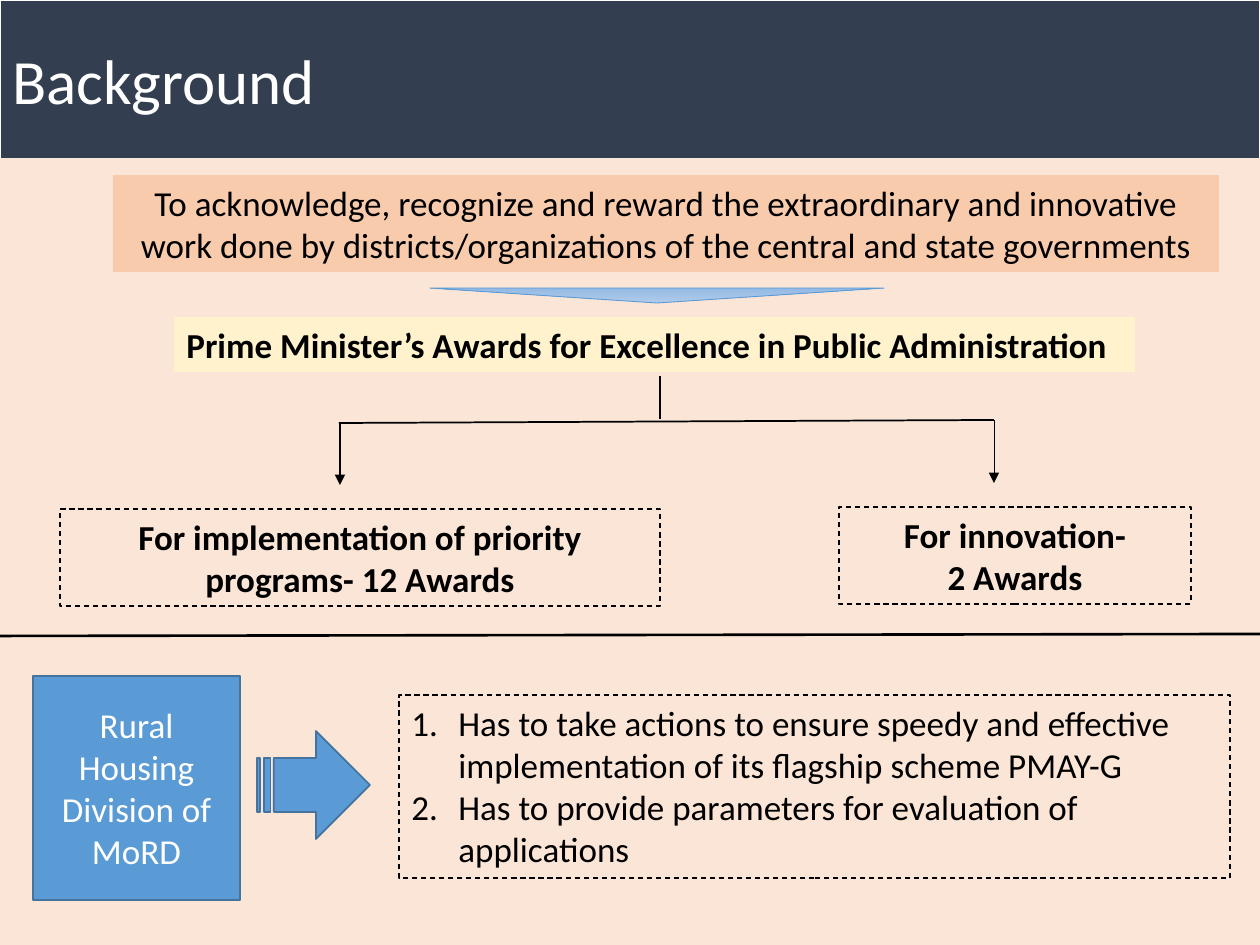
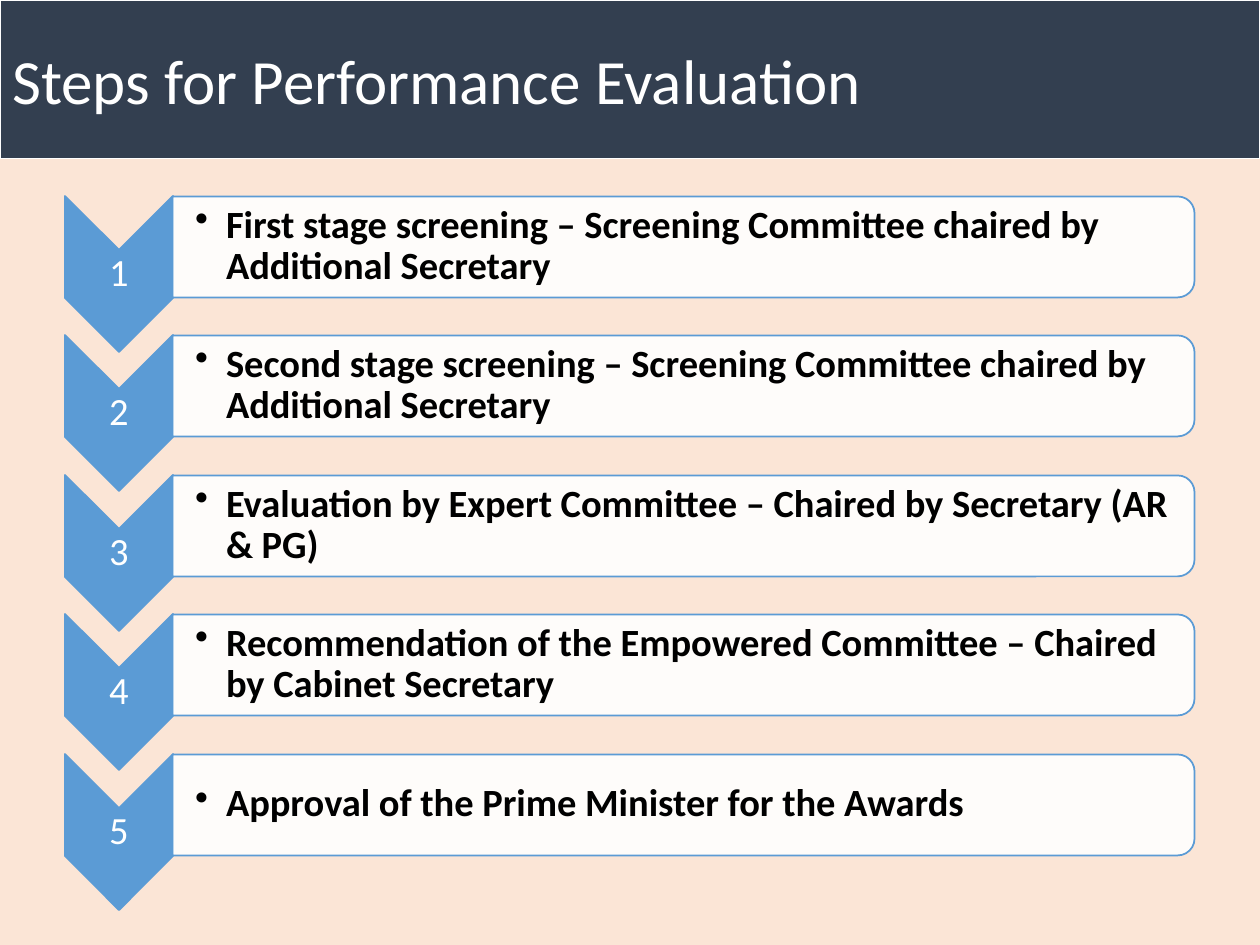
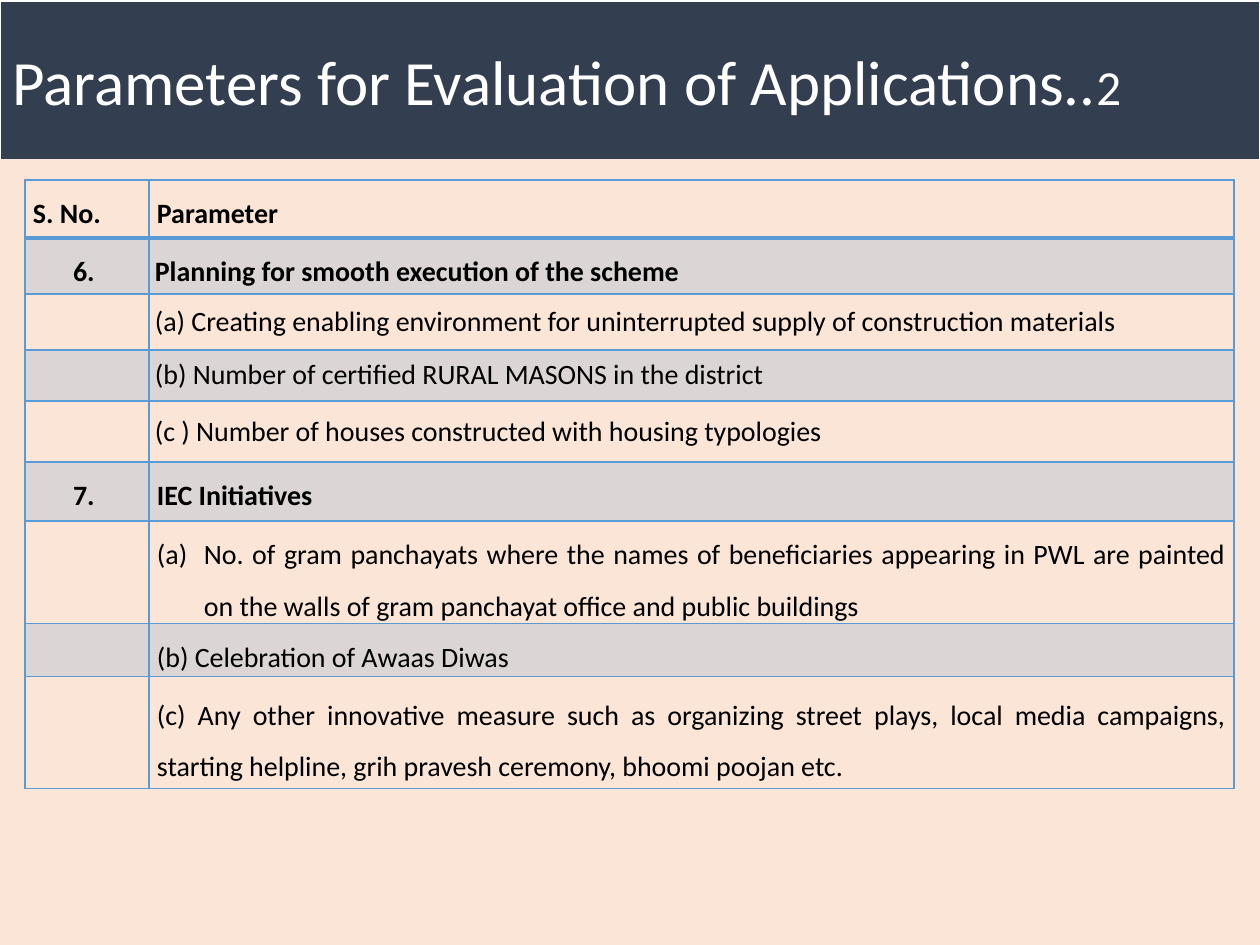
from dataclasses import dataclass, replace
from typing import Optional

from lxml import etree
from pptx import Presentation
from pptx import util as u
from pptx.dml.color import RGBColor
from pptx.enum import dml, shapes, text
from pptx.oxml.ns import qn

EMU_PER_PX = 914400 / 126
SLIDE_W, SLIDE_H = 1260, 945
TITLE_H = 159

WHITE = RGBColor(0xFF, 0xFF, 0xFF)
BLACK = RGBColor(0x00, 0x00, 0x00)
NAVY = RGBColor(0x33, 0x3F, 0x50)
PEACH = RGBColor(0xFB, 0xE5, 0xD6)
ORANGE = RGBColor(0xF8, 0xCB, 0xAD)
CREAM = RGBColor(0xFF, 0xF2, 0xCC)
BLUE = RGBColor(0x5B, 0x9B, 0xD5)
DARK_BLUE = RGBColor(0x43, 0x73, 0x9E)
PALE_BLUE = RGBColor(0xB1, 0xCB, 0xE9)
SOFT_BLUE = RGBColor(0x93, 0xB9, 0xE4)

FONT = "Calibri"
PRESET = shapes.MSO_SHAPE
LEFT, CENTER, JUSTIFY = text.PP_ALIGN.LEFT, text.PP_ALIGN.CENTER, text.PP_ALIGN.JUSTIFY
TOP, MIDDLE = text.MSO_ANCHOR.TOP, text.MSO_ANCHOR.MIDDLE


@dataclass(frozen=True)
class Box:
    x: int
    y: int
    w: int
    h: int

    def emu(self) -> tuple:
        return px(self.x), px(self.y), px(self.w), px(self.h)

    def down(self, dy: int) -> "Box":
        return replace(self, y=self.y + dy)

    def before_quarter_turn(self) -> "Box":
        """The box that covers this one once it is turned by 90 degrees."""
        shift = (self.w - self.h) // 2
        return Box(self.x + shift, self.y - shift, self.h, self.w)


@dataclass(frozen=True)
class Line:
    color: RGBColor
    width: float = 1
    dashed: bool = False


@dataclass(frozen=True)
class Marker:
    tag: str
    attribute: str
    value: str
    indent: int


@dataclass(frozen=True)
class TextStyle:
    size: int = 20
    color: RGBColor = BLACK
    bold: bool = False
    align: text.PP_ALIGN = LEFT
    anchor: text.MSO_ANCHOR = TOP
    spacing: Optional[float] = None
    marker: Optional[Marker] = None


@dataclass(frozen=True)
class Connector:
    start: tuple[int, int]
    end: tuple[int, int]
    width: float = 1
    arrow: bool = False


@dataclass(frozen=True)
class ParameterRow:
    number: str
    parameter: str
    height: int
    style: TextStyle
    shaded: bool = False
    margin: int = 8


NUMBERED = Marker("a:buAutoNum", "type", "arabicPeriod", 47)
LETTERED = Marker("a:buAutoNum", "type", "alphaLcParenBoth", 47)
BULLET = Marker("a:buChar", "char", "•", 31)

TITLE = TextStyle(36, WHITE, anchor=MIDDLE)
BODY = TextStyle()
CENTERED = TextStyle(align=CENTER)
AWARD = TextStyle(bold=True, align=CENTER)
DASHED = Line(BLACK, 0.75, dashed=True)
STEP_NUMBER = TextStyle(22, WHITE, align=CENTER, anchor=MIDDLE, spacing=0.9)
STEP_TEXT = TextStyle(22, bold=True, anchor=MIDDLE, spacing=0.9, marker=BULLET)
HEADING = TextStyle(16, bold=True, align=JUSTIFY, spacing=1.5)
SHORT_ITEM = TextStyle(16, anchor=MIDDLE)
LONG_ITEM = TextStyle(16, align=JUSTIFY, anchor=MIDDLE, spacing=1.5)

BRANCHES = [
    Connector((339, 423), (994, 420)),
    Connector((340, 422), (340, 485), arrow=True),
    Connector((994, 420), (994, 483), 0.5, arrow=True),
    Connector((660, 376), (660, 419)),
    Connector((0, 636), (SLIDE_W, 634), 1.5),
]

STEPS = [
    "First stage screening – Screening Committee chaired by Additional Secretary",
    "Second stage screening – Screening Committee chaired by Additional Secretary",
    "Evaluation by Expert Committee – Chaired by Secretary (AR & PG)",
    "Recommendation of the Empowered Committee – Chaired by Cabinet Secretary",
    "Approval of the Prime Minister for the Awards",
]
STEPS_SPAN = 558

COLUMNS = (124, 1085)
ROWS = [
    ParameterRow("S. No.", "Parameter", 58, HEADING),
    ParameterRow("6. ", "Planning for smooth execution of the scheme", 56, HEADING, True, 6),
    ParameterRow("", "(a) Creating enabling environment for uninterrupted supply of "
                 "construction materials", 56, SHORT_ITEM, margin=6),
    ParameterRow("", "(b) Number of certified RURAL MASONS in the district",
                 51, SHORT_ITEM, True, 6),
    ParameterRow("", "(c ) Number of houses constructed with housing typologies",
                 61, SHORT_ITEM, margin=6),
    ParameterRow("7. ", "IEC Initiatives", 59, HEADING, True),
    ParameterRow("", "No. of gram panchayats where the names of beneficiaries appearing in PWL "
                 "are painted on the walls of gram panchayat office and public buildings",
                 97, replace(LONG_ITEM, marker=LETTERED)),
    ParameterRow("", "(b) Celebration of Awaas Diwas", 53, replace(LONG_ITEM, anchor=TOP), True),
    ParameterRow("", "(c) Any other innovative measure such as organizing street plays, local "
                 "media campaigns, starting helpline, grih pravesh ceremony, bhoomi poojan etc.",
                 112, LONG_ITEM),
]


def px(length: int) -> int:
    return round(length * EMU_PER_PX)


def set_alpha(fill_parent, percent: int) -> None:
    color = fill_parent.find(f"{qn('a:solidFill')}/{qn('a:srgbClr')}")
    etree.SubElement(color, qn("a:alpha"), val=str(percent * 1000))


def set_marker(p, marker: Marker) -> None:
    pPr = p._p.get_or_add_pPr()
    pPr.set("marL", str(px(marker.indent)))
    pPr.set("indent", str(-px(marker.indent)))
    etree.SubElement(pPr, qn(marker.tag)).set(marker.attribute, marker.value)


def write(tf, content: str, style: TextStyle) -> None:
    """Fill a text frame, one paragraph for each line of content."""
    tf.text = content
    tf.word_wrap = True
    tf.vertical_anchor = style.anchor
    for p in tf.paragraphs:
        p.alignment = style.align
        if style.spacing:
            p.line_spacing = style.spacing
        if style.marker:
            set_marker(p, style.marker)
        for r in p.runs:
            format_run(r, style)


def format_run(r, style: TextStyle) -> None:
    r.font.name = FONT
    r.font.size = u.Pt(style.size)
    r.font.bold = style.bold
    r.font.color.rgb = style.color


def add_shape(s, preset: PRESET, box: Box, fill: Optional[RGBColor] = None,
              line: Optional[Line] = None, content: str = "", style: TextStyle = BODY):
    sp = s.shapes.add_shape(preset, *box.emu())
    sp.shadow.inherit = False
    if fill is None:
        sp.fill.background()
    else:
        sp.fill.solid()
        sp.fill.fore_color.rgb = fill
    if line is None:
        sp.line.fill.background()
    else:
        sp.line.color.rgb = line.color
        sp.line.width = u.Pt(line.width)
        if line.dashed:
            sp.line.dash_style = dml.MSO_LINE.DASH
    if content:
        write(sp.text_frame, content, style)
    return sp


def add_label(s, box: Box, content: str, style: TextStyle, left_inset: int = 3) -> None:
    tf = s.shapes.add_textbox(*box.emu()).text_frame
    write(tf, content, style)
    tf.margin_left = px(left_inset)
    tf.margin_top = tf.margin_right = tf.margin_bottom = px(3)


def add_connector(s, spec: Connector) -> None:
    ends = [px(v) for v in spec.start + spec.end]
    c = s.shapes.add_connector(shapes.MSO_CONNECTOR.STRAIGHT, *ends)
    c.line.color.rgb = BLACK
    c.line.width = u.Pt(spec.width)
    spPr = c.element.spPr
    if spec.arrow:
        etree.SubElement(spPr.find(qn("a:ln")), qn("a:tailEnd"), type="triangle")
    etree.SubElement(spPr, qn("a:effectLst"))


def add_titled_slide(prs, title: str, title_y: int = 0, body_y: int = 160):
    """Add a blank slide with the dark title band and the peach body."""
    s = prs.slides.add_slide(prs.slide_layouts[6])
    band = add_shape(s, PRESET.RECTANGLE, Box(0, title_y, SLIDE_W, TITLE_H), NAVY,
                     Line(WHITE, 1.5), title, TITLE)
    add_shape(s, PRESET.RECTANGLE, Box(0, body_y, SLIDE_W, 786), PEACH, Line(PEACH))
    return s, band


def build_background(prs) -> None:
    s, _ = add_titled_slide(prs, "Background", body_y=TITLE_H)
    rect = PRESET.RECTANGLE
    add_shape(s, rect, Box(174, 317, 961, 55), CREAM,
              content="Prime Minister’s Awards for Excellence in Public Administration",
              style=replace(BODY, bold=True))
    pointer = add_shape(s, PRESET.ISOSCELES_TRIANGLE, Box(430, 288, 454, 15), BLUE,
                        Line(BLUE, 0.5))
    pointer.rotation = 180
    pointer.fill.gradient()
    pointer.fill.gradient_angle = 270
    for stop, color in zip(pointer.fill.gradient_stops, (PALE_BLUE, SOFT_BLUE)):
        stop.color.rgb = color
    add_shape(s, rect, Box(113, 175, 1106, 97), ORANGE,
              content="To acknowledge, recognize and reward the extraordinary and innovative "
              "work done by districts/organizations of the central and state governments",
              style=CENTERED)
    for spec in BRANCHES:
        add_connector(s, spec)
    add_shape(s, rect, Box(60, 509, 600, 97), line=DASHED,
              content="For implementation of priority programs- 12 Awards", style=AWARD)
    add_shape(s, rect, Box(839, 507, 352, 97), line=DASHED,
              content="For innovation-\n2 Awards", style=AWARD)
    add_shape(s, rect, Box(33, 676, 207, 224), BLUE, Line(DARK_BLUE),
              "Rural Housing Division of MoRD", replace(CENTERED, color=WHITE, anchor=MIDDLE))
    add_shape(s, PRESET.STRIPED_RIGHT_ARROW, Box(257, 731, 113, 108), BLUE, Line(DARK_BLUE))
    add_shape(s, rect, Box(399, 695, 831, 183), line=DASHED,
              content="Has to take actions to ensure speedy and effective implementation of "
              "its flagship scheme PMAY-G\n"
              "Has to provide parameters for evaluation of applications",
              style=replace(BODY, marker=NUMBERED))


def build_steps(prs) -> None:
    s, _ = add_titled_slide(prs, "Steps for Performance Evaluation")
    chevron_box, number_box = Box(65, 196, 108, 156), Box(65, 251, 108, 47)
    panel_box, text_box = Box(173, 196, 1022, 101), Box(174, 201, 1017, 91)
    for i, step in enumerate(STEPS):
        dy = STEPS_SPAN * i // (len(STEPS) - 1)
        chevron = add_shape(s, PRESET.CHEVRON, chevron_box.down(dy).before_quarter_turn(),
                            BLUE, Line(BLUE))
        add_label(s, number_box.down(dy), str(i + 1), STEP_NUMBER)
        panel = add_shape(s, PRESET.ROUND_2_SAME_RECTANGLE,
                          panel_box.down(dy).before_quarter_turn(), WHITE, Line(BLUE))
        chevron.rotation = panel.rotation = 90
        set_alpha(panel.element.spPr, 90)
        add_label(s, text_box.down(dy), step, STEP_TEXT, left_inset=21)


def set_borders(cell, top: float, bottom: float) -> None:
    """Draw all four cell borders, with widths in points."""
    tcPr = cell._tc.get_or_add_tcPr()
    widths = {"a:lnL": 1, "a:lnR": 1, "a:lnT": top, "a:lnB": bottom}
    for i, (tag, width) in enumerate(widths.items()):
        ln = etree.Element(qn(tag), w=str(u.Pt(width)))
        fill = etree.SubElement(ln, qn("a:solidFill"))
        etree.SubElement(fill, qn("a:srgbClr"), val=str(BLUE))
        tcPr.insert(i, ln)


def fill_cell(cell, content: str, style: TextStyle, row: ParameterRow) -> None:
    write(cell.text_frame, content, style)
    cell.vertical_anchor = style.anchor
    cell.margin_left = cell.margin_right = px(row.margin)
    cell.margin_top = cell.margin_bottom = 0
    if row.shaded:
        cell.fill.solid()
        cell.fill.fore_color.rgb = BLUE
        set_alpha(cell._tc.get_or_add_tcPr(), 20)
    else:
        cell.fill.background()


def build_parameters(prs) -> None:
    s, band = add_titled_slide(prs, "Parameters for Evaluation of Applications..", title_y=1)
    r = band.text_frame.paragraphs[0].add_run()
    r.text = "2"
    format_run(r, replace(TITLE, size=28))

    box = Box(25, 180, sum(COLUMNS), sum(row.height for row in ROWS))
    table = s.shapes.add_table(len(ROWS), len(COLUMNS), *box.emu()).table
    table.first_row = table.horz_banding = False
    for column, width in zip(table.columns, COLUMNS):
        column.width = px(width)
    for i, row in enumerate(ROWS):
        table.rows[i].height = px(row.height)
        number_style = replace(row.style, align=JUSTIFY if i == 0 else CENTER, marker=None)
        fill_cell(table.cell(i, 0), row.number, number_style, row)
        fill_cell(table.cell(i, 1), row.parameter, row.style, row)
        for cell in table.rows[i].cells:
            set_borders(cell, top=2 if i == 1 else 1, bottom=2 if i == 0 else 1)


def main() -> None:
    prs = Presentation()
    prs.slide_width, prs.slide_height = px(SLIDE_W), px(SLIDE_H)
    build_background(prs)
    build_steps(prs)
    build_parameters(prs)
    prs.save("out.pptx")


if __name__ == "__main__":
    main()
